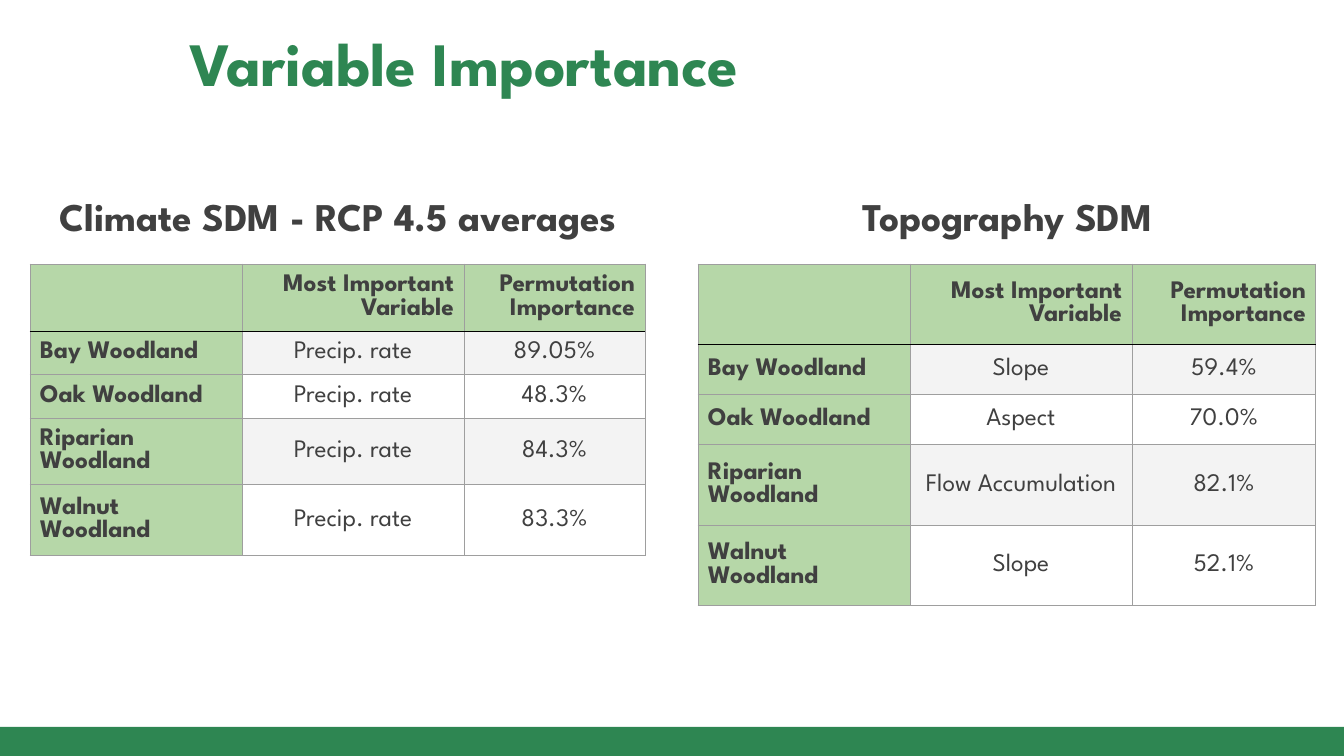
from lxml.etree import SubElement
from pptx import Presentation
from pptx.dml.color import RGBColor
from pptx.enum.shapes import MSO_SHAPE
from pptx.enum.text import MSO_ANCHOR, MSO_AUTO_SIZE, PP_ALIGN
from pptx.oxml.ns import qn
from pptx.util import Emu, Pt

COLORS = {"green": "2E8652", "pale": "B6D7A8", "gray": "F3F3F3", "white": "FFFFFF",
          "text": "404040", "grid": "9E9E9E", "rule": "000000"}
HEADS = ["", "Most Important Variable", "Permutation Importance"]
WOODS = ["Bay Woodland", "Oak Woodland", "Riparian Woodland", "Walnut Woodland"]
MODELS = [
    {"name": "Climate SDM - RCP 4.5 averages", "label": (-24, 182, 724, 49),
     "left": 30, "cols": [212, 222, 181], "rows": [67, 43, 44, 66, 71],
     "values": [("Precip. rate", "89.05%"), ("Precip. rate", "48.3%"),
                ("Precip. rate", "84.3%"), ("Precip. rate", "83.3%")]},
    {"name": "Topography SDM", "label": (752, 182, 511, 49),
     "left": 698, "cols": [212, 222, 184], "rows": [67, 43, 44, 66, 67],
     "values": [("Slope", "59.4%"), ("Aspect", "70.0%"),
                ("Flow Accumulation", "82.1%"), ("Slope", "52.1%")]},
]


def px(n):
    return Emu(round(n * 914400 / 100.8))


def color(name):
    return RGBColor.from_string(COLORS[name])


def assign(item, values):
    for key, value in values.items():
        setattr(item, key, value)


class Page:
    font = "League Spartan"
    inset = {"margin_" + side: px(10) for side in ("left", "top", "right", "bottom")}

    def __init__(self, deck):
        self.slide = deck.slides.add_slide(deck.slide_layouts[5])
        self.shapes = self.slide.shapes

    def text(self, frame, text, size, tint="text", bold=True, align=PP_ALIGN.LEFT):
        para = frame.paragraphs[0]
        para.alignment = align
        run = para.add_run()
        run.text = text
        assign(run.font, {"name": self.font, "size": Pt(size), "bold": bold})
        run.font.color.rgb = color(tint)
        return para

    def bar(self, *box):
        shape = self.shapes.add_shape(MSO_SHAPE.RECTANGLE, *map(px, box))
        shape.shadow.inherit = False
        shape.fill.solid()
        shape.fill.fore_color.rgb = color("green")
        shape.line.fill.background()

    def title(self, text, *box):
        shape = self.shapes.title
        assign(shape, dict(zip(("left", "top", "width", "height"), map(px, box))))
        assign(shape.text_frame, {"vertical_anchor": MSO_ANCHOR.MIDDLE,
                                  "auto_size": MSO_AUTO_SIZE.NONE, "word_wrap": True})
        self.text(shape.text_frame, text, 44, "green").line_spacing = 0.9

    def label(self, text, *box):
        frame = self.shapes.add_textbox(*map(px, box)).text_frame
        assign(frame, {"word_wrap": True, **self.inset})
        self.text(frame, text, 28, align=PP_ALIGN.CENTER)

    def edges(self, cell, row):
        """Draw grid lines, with a dark rule under the header row."""
        props = cell._tc.get_or_add_tcPr()
        for side in "LRTB":
            dark = (row, side) in ((0, "B"), (1, "T"))
            line = SubElement(props, qn("a:ln" + side), w=str(Pt(0.75)))
            fill = SubElement(line, qn("a:solidFill"))
            SubElement(fill, qn("a:srgbClr"), val=COLORS["rule" if dark else "grid"])

    def cell(self, cell, text, row, col):
        head = row == 0 or col == 0
        self.edges(cell, row)
        cell.fill.solid()
        cell.fill.fore_color.rgb = color("pale" if head else "gray" if row % 2 else "white")
        assign(cell, {"vertical_anchor": MSO_ANCHOR.MIDDLE, **self.inset})
        align = PP_ALIGN.LEFT if col == 0 else PP_ALIGN.RIGHT if row == 0 else PP_ALIGN.CENTER
        if text:
            self.text(cell.text_frame, text, 18, bold=head, align=align)

    def table(self, data, left, top, cols, rows):
        box = map(px, (left, top, sum(cols), sum(rows)))
        table = self.shapes.add_table(len(rows), len(cols), *box).table
        assign(table, {"first_row": False, "horz_banding": False})
        for col, width in zip(table.columns, cols):
            col.width = px(width)
        for r, (height, texts) in enumerate(zip(rows, data)):
            table.rows[r].height = px(height)
            for c, text in enumerate(texts):
                self.cell(table.cell(r, c), text, r, c)


def main():
    deck = Presentation()
    assign(deck, {"slide_width": px(1344), "slide_height": px(756)})
    page = Page(deck)
    page.bar(0, 727, 1344, 29)
    page.title("Variable Importance", 179, 29, 1159, 76)
    for model in MODELS:
        data = [HEADS] + [[wood, *pair] for wood, pair in zip(WOODS, model["values"])]
        page.table(data, model["left"], 264, model["cols"], model["rows"])
        page.label(model["name"], *model["label"])
    deck.save("out.pptx")


if __name__ == "__main__":
    main()
